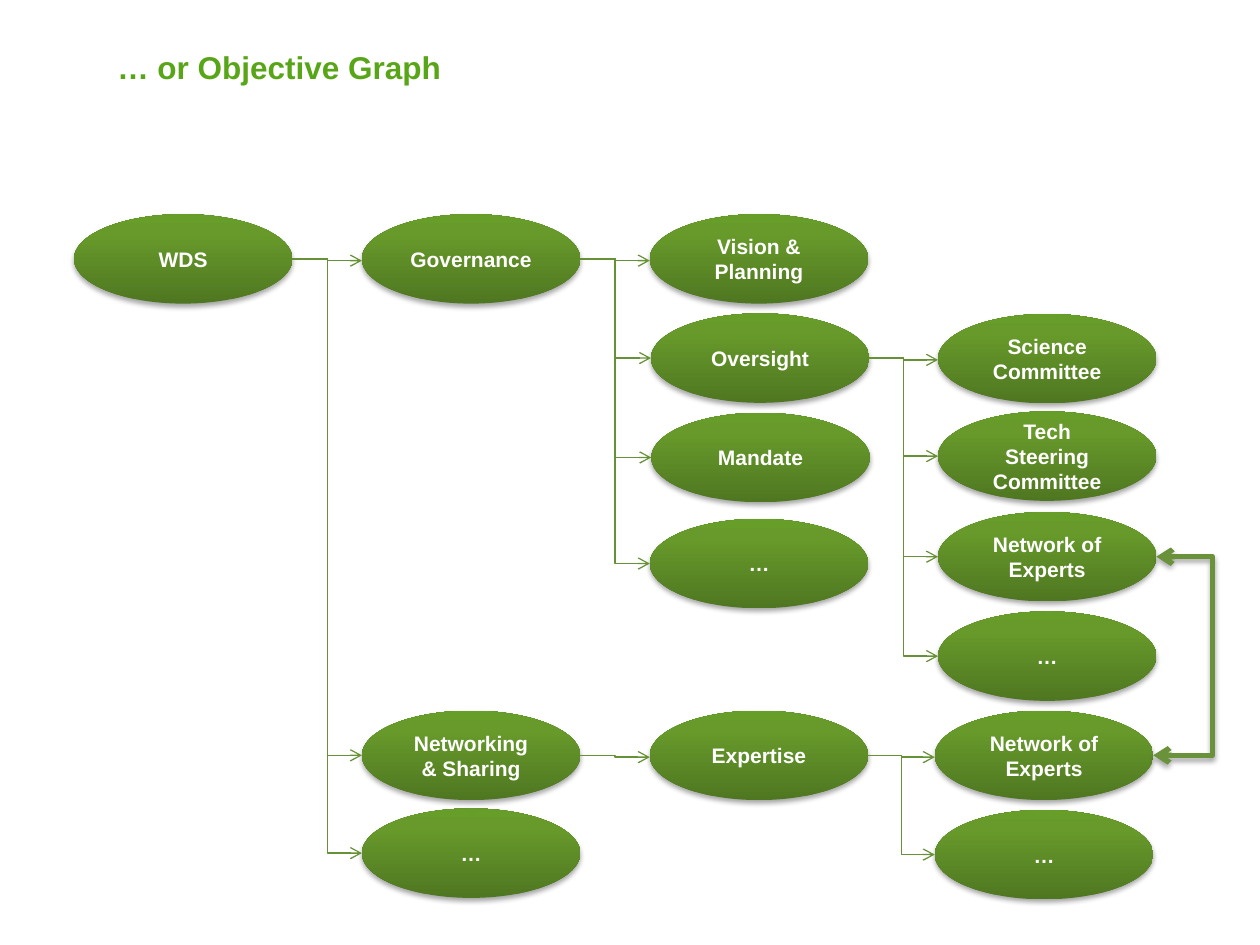
"""Build the objective graph slide: a tree of ellipses joined by elbow arrows."""
import pptx
import pptx.dml.color
import pptx.enum.shapes
import pptx.enum.text
import pptx.oxml
import pptx.oxml.ns
import pptx.util
from lxml import etree

Pt = pptx.util.Pt
qn = pptx.oxml.ns.qn

COLORS = {
    "title": "58A618", "label": "FFFFFF", "shadow": "000000",
    "arrow": "679137", "link": "69923A",
    "bottom": "4F7721", "middle": "679A2B", "top": "679D29",
}
FONT = "Arial"
NODE_WIDTH, NODE_HEIGHT = 124.8, 51.1

NODES = {
    "wds": ("WDS", 42.3, 122.4),
    "governance": ("Governance", 206.8, 122.4),
    "vision": ("Vision &\nPlanning", 371.3, 122.4),
    "oversight": ("Oversight", 372, 179.1),
    "mandate": ("Mandate", 372.2, 235.9),
    "more governance": ("…", 371.3, 296.5),
    "science": ("Science Committee", 536, 179.4),
    "tech": ("Tech Steering\nCommittee", 536, 235.1),
    "oversight experts": ("Network of Experts", 536, 292.6),
    "more oversight": ("…", 536, 349.4),
    "networking": ("Networking & Sharing", 206.8, 406.1),
    "expertise": ("Expertise", 371.3, 406.1),
    "experts": ("Network of Experts", 534.2, 406.1),
    "more expertise": ("…", 534.2, 462.8),
    "more objectives": ("…", 206.8, 462),
}
BRANCHES = {
    "wds": ["governance", "networking", "more objectives"],
    "governance": ["vision", "oversight", "mandate", "more governance"],
    "oversight": ["science", "tech", "oversight experts", "more oversight"],
    "networking": ["expertise"],
    "expertise": ["experts", "more expertise"],
}


def rgb(name):
    return pptx.dml.color.RGBColor.from_string(COLORS[name])


def style_text(paragraph, size, color):
    paragraph.font.name = FONT
    paragraph.font.size = Pt(size)
    paragraph.font.bold = True
    paragraph.font.color.rgb = rgb(color)


def add_effects(properties, shadow):
    effects = etree.SubElement(properties, qn("a:effectLst"))
    if shadow:
        outer = etree.SubElement(
            effects, qn("a:outerShdw"), blurRad=str(Pt(3.1)), dist=str(Pt(1.8)),
            dir="5400000", rotWithShape="0")
        tint = etree.SubElement(outer, qn("a:srgbClr"), val=COLORS["shadow"])
        etree.SubElement(tint, qn("a:alpha"), val="35000")


def add_gradient(properties):
    gradient = etree.SubElement(properties, qn("a:gradFill"), rotWithShape="1")
    stops = etree.SubElement(gradient, qn("a:gsLst"))
    for position, name in ((0, "bottom"), (80, "middle"), (100, "top")):
        stop = etree.SubElement(stops, qn("a:gs"), pos=str(position * 1000))
        etree.SubElement(stop, qn("a:srgbClr"), val=COLORS[name])
    etree.SubElement(gradient, qn("a:lin"), ang="16200000", scaled="0")


def add_title(slide, text):
    title = slide.shapes.title
    title.left, title.top, title.width, title.height = Pt(59.8), Pt(0), Pt(595.4), Pt(77)
    title.text_frame.text = text
    title.text_frame.vertical_anchor = pptx.enum.text.MSO_ANCHOR.MIDDLE
    heading = title.text_frame.paragraphs[0]
    heading.alignment = pptx.enum.text.PP_ALIGN.LEFT
    style_text(heading, 18, "title")


def add_node(slide, label, left, top):
    node = slide.shapes.add_shape(
        pptx.enum.shapes.MSO_SHAPE.OVAL, Pt(left), Pt(top), Pt(NODE_WIDTH), Pt(NODE_HEIGHT))
    properties = node.element.spPr
    add_gradient(properties)
    node.line.fill.background()
    add_effects(properties, shadow=True)
    node.text_frame.word_wrap = True
    node.text_frame.text = label
    for paragraph in node.text_frame.paragraphs:
        paragraph.alignment = pptx.enum.text.PP_ALIGN.CENTER
        style_text(paragraph, 12, "label")


def add_elbow(slide, start, end, color, weight, ends, bend=0.5, shadow=False):
    elbow = slide.shapes.add_connector(
        pptx.enum.shapes.MSO_CONNECTOR.ELBOW, *(Pt(value) for value in start + end))
    elbow.line.color.rgb = rgb(color)
    elbow.line.width = Pt(weight)
    properties = elbow.element.spPr
    for tag in ends:
        etree.SubElement(properties.find(qn("a:ln")), qn(tag), type="arrow")
    adjustments = properties.find(qn("a:prstGeom")).find(qn("a:avLst"))
    etree.SubElement(
        adjustments, qn("a:gd"), name="adj1", fmla=f"val {round(bend * 100000)}")
    add_effects(properties, shadow)


def left_side(name):
    _, left, top = NODES[name]
    return left, top + NODE_HEIGHT / 2


def right_side(name):
    left, middle = left_side(name)
    return left + NODE_WIDTH, middle


def add_branch(slide, parent, child):
    start, (left, middle) = right_side(parent), left_side(child)
    level = abs(middle - start[1]) < 1
    end = (left, start[1] + 1 if level else middle)
    add_elbow(slide, start, end, "arrow", 0.75, ["a:tailEnd"])


def add_cross_link(slide, lower, upper, reach):
    start, end = right_side(lower), right_side(upper)
    add_elbow(slide, start, end, "link", 3, ["a:headEnd", "a:tailEnd"],
              bend=reach / (end[0] - start[0]), shadow=True)


def main():
    deck = pptx.Presentation()
    deck.slide_width, deck.slide_height = Pt(720), Pt(540)
    slide = deck.slides.add_slide(deck.slide_layouts[5])
    add_title(slide, "… or Objective Graph")
    for label, left, top in NODES.values():
        add_node(slide, label, left, top)
    for parent, children in BRANCHES.items():
        for child in children:
            add_branch(slide, parent, child)
    add_cross_link(slide, "experts", "oversight experts", reach=33.6)
    deck.save("out.pptx")


if __name__ == "__main__":
    main()
